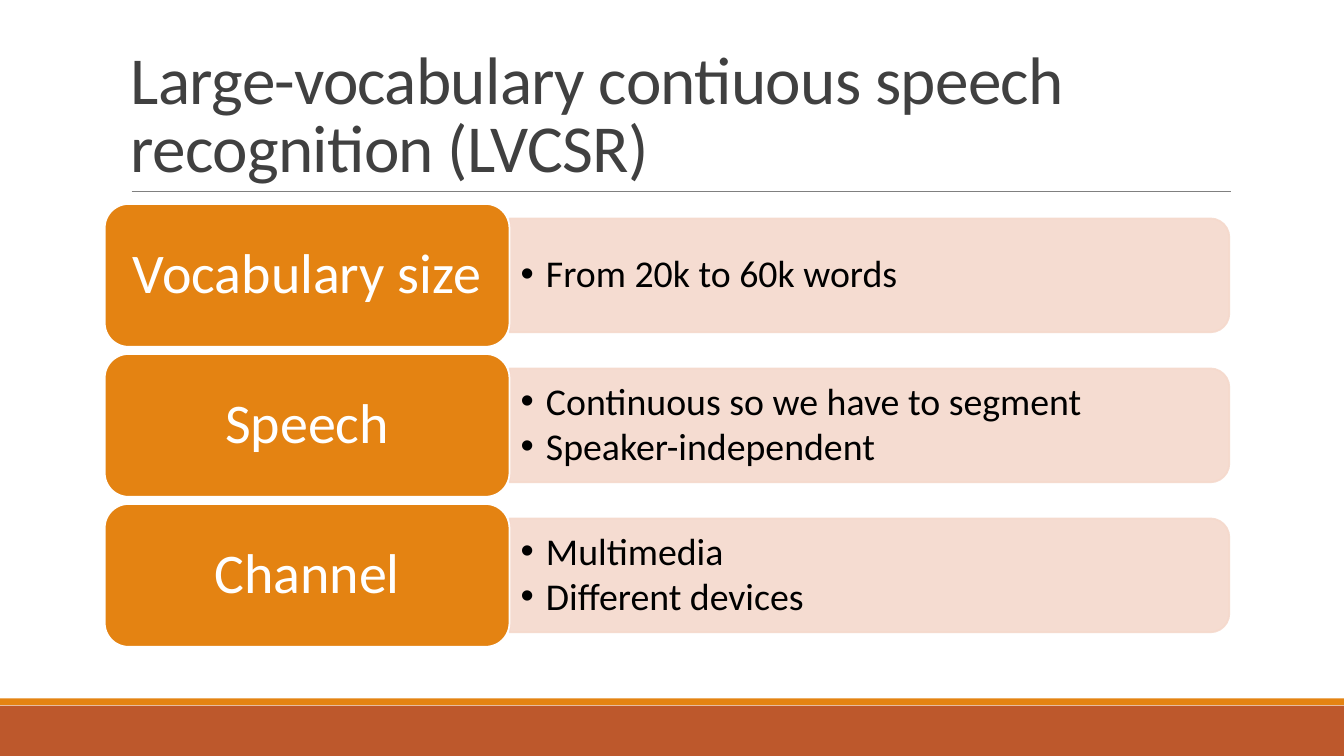
import pptx
import pptx.util
import pptx.dml.color
import pptx.enum.shapes
import pptx.enum.text
import pptx.oxml
import pptx.oxml.ns
from dataclasses import dataclass
from lxml import etree

TITLE = "Large-vocabulary contiuous speech recognition (LVCSR)"
ROWS = [
    ("Vocabulary size", ["From 20k to 60k words"]),
    ("Speech", ["Continuous so we have to segment", "Speaker-independent"]),
    ("Channel", ["Multimedia", "Different devices"]),
]


@dataclass(frozen=True)
class Theme:
    face: str = "Calibri"
    orange: str = "E48312"
    rust: str = "BD582C"
    pale: str = "F5D9CC"
    rule: str = "808080"
    ink: str = "404040"
    black: str = "000000"
    white: str = "FFFFFF"
    head: int = 48
    label: int = 40
    point: int = 27


THEME = Theme()
Cm = pptx.util.Cm
Pt = pptx.util.Pt
KIND = pptx.enum.shapes.MSO_SHAPE
ALIGN = pptx.enum.text.PP_ALIGN
ANCHOR = pptx.enum.text.MSO_ANCHOR
qn = pptx.oxml.ns.qn

WIDE, HIGH = 33.87, 19.05
LEFT, TOP, PITCH = 2.64, 5.14, 3.78
LABEL_W, LABEL_H = 10.2, 3.6
PANEL_W, PANEL_H = 18.14, 2.87
POINT_W, POINT_H = 18.0, 2.6


def rgb(code):
    return pptx.dml.color.RGBColor.from_string(code)


def place(shape, left, top, width, height):
    shape.left, shape.top = Cm(left), Cm(top)
    shape.width, shape.height = Cm(width), Cm(height)


def block(slide, kind, box, fill, line=None):
    shape = slide.shapes.add_shape(kind, *map(Cm, box))
    shape.shadow.inherit = False
    shape.fill.solid()
    shape.fill.fore_color.rgb = rgb(fill)
    if line:
        shape.line.color.rgb = rgb(line)
        shape.line.width = Pt(1.25)
    else:
        shape.line.fill.background()
    return shape


def frame(shape, anchor, side, edge):
    text = shape.text_frame
    text.word_wrap = True
    text.auto_size = pptx.enum.text.MSO_AUTO_SIZE.NONE
    text.vertical_anchor = anchor
    text.margin_left = text.margin_right = Cm(side)
    text.margin_top = text.margin_bottom = Cm(edge)
    return text


def style(para, size, color, space, align=ALIGN.LEFT):
    para.alignment = align
    para.line_spacing = space
    para.font.name = THEME.face
    para.font.size = Pt(size)
    para.font.color.rgb = rgb(color)


def bullet(para):
    props = para._p.get_or_add_pPr()
    props.set("marL", str(Cm(0.64)))
    props.set("indent", str(-Cm(0.64)))
    etree.SubElement(props, qn("a:buFont")).set("typeface", "Arial")
    etree.SubElement(props, qn("a:buChar")).set("char", "•")


def panel(slide, mid):
    left = LEFT + LABEL_W + (PANEL_W - PANEL_H) / 2
    box = (left, mid - PANEL_W / 2, PANEL_H, PANEL_W)
    shape = block(slide, KIND.ROUND_2_SAME_RECTANGLE, box, THEME.pale, THEME.pale)
    shape.rotation = 90
    for tint in shape._element.spPr.iter(qn("a:srgbClr")):
        etree.SubElement(tint, qn("a:alpha")).set("val", "90000")


def points(slide, mid, lines):
    box = (LEFT + LABEL_W, mid - POINT_H / 2, POINT_W, POINT_H)
    text = frame(slide.shapes.add_textbox(*map(Cm, box)), ANCHOR.MIDDLE, 0.28, 0.15)
    for i, line in enumerate(lines):
        para = text.paragraphs[0] if i == 0 else text.add_paragraph()
        para.text = line
        bullet(para)
        para.space_after = Pt(3)
        style(para, THEME.point, THEME.black, 0.9)


def label(slide, mid, name):
    box = (LEFT, mid - LABEL_H / 2, LABEL_W, LABEL_H)
    shape = block(slide, KIND.ROUNDED_RECTANGLE, box, THEME.orange, THEME.white)
    para = frame(shape, ANCHOR.MIDDLE, 0.3, 0.2).paragraphs[0]
    para.text = name
    style(para, THEME.label, THEME.white, 0.9, ALIGN.CENTER)


def title(slide):
    shape = slide.shapes.title
    place(shape, 3.05, 0.79, 27.94, 4.04)
    para = frame(shape, ANCHOR.BOTTOM, 0.25, 0.13).paragraphs[0]
    para.text = TITLE
    style(para, THEME.head, THEME.ink, 0.85)
    para._p.get_or_add_pPr().get_or_add_defRPr().set("spc", "-50")


def main():
    deck = pptx.Presentation()
    deck.slide_width, deck.slide_height = Cm(WIDE), Cm(HIGH)
    slide = deck.slides.add_slide(deck.slide_layouts[5])

    block(slide, KIND.RECTANGLE, (0, 17.78, WIDE, 1.27), THEME.rust)
    block(slide, KIND.RECTANGLE, (0, 17.6, WIDE, 0.17), THEME.orange)
    ends = map(Cm, (3.32, 4.83, 31.01, 4.83))
    rule = slide.shapes.add_connector(pptx.enum.shapes.MSO_CONNECTOR.STRAIGHT, *ends)
    rule.line.color.rgb = rgb(THEME.rule)
    rule.line.width = Pt(0.5)
    etree.SubElement(rule._element.spPr, qn("a:effectLst"))

    title(slide)
    for i, (name, lines) in enumerate(ROWS):
        mid = TOP + LABEL_H / 2 + i * PITCH
        panel(slide, mid)
        points(slide, mid, lines)
        label(slide, mid, name)
    deck.save("out.pptx")


if __name__ == "__main__":
    main()
